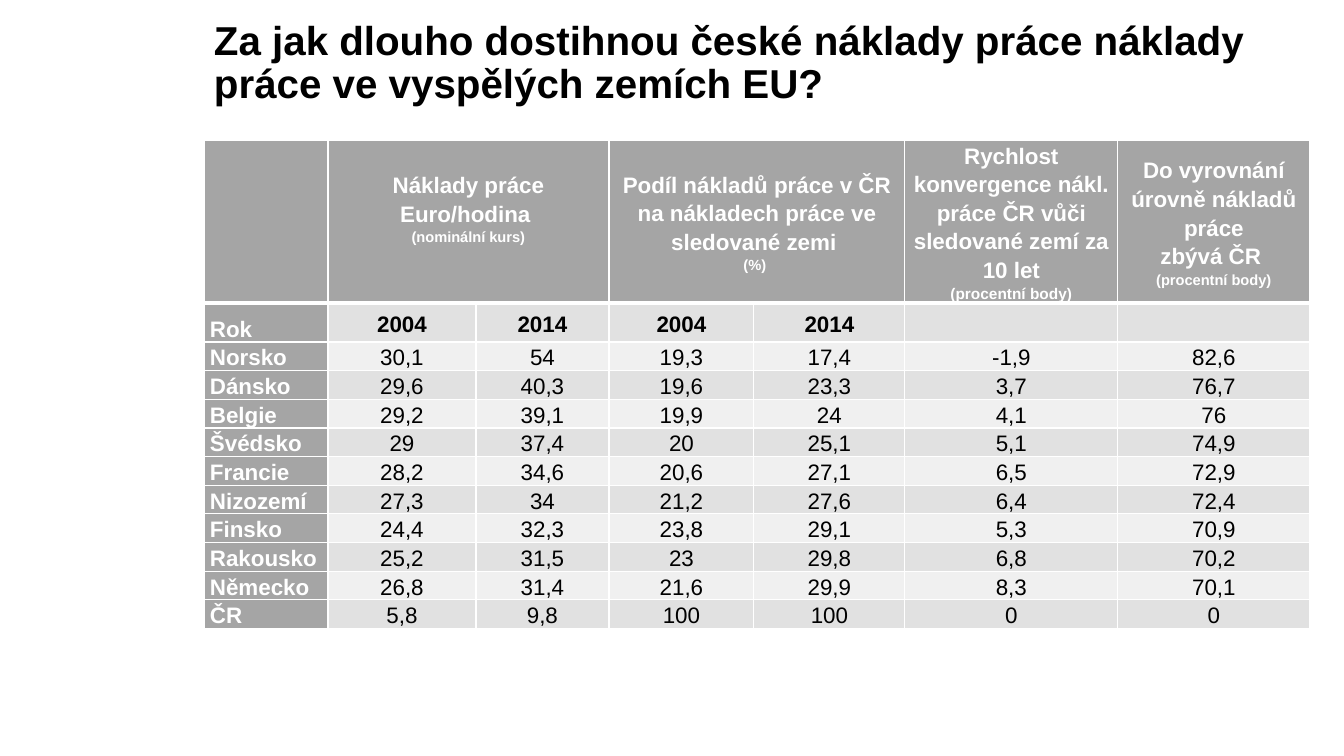
import pptx
import pptx.dml.color
import pptx.enum.text
import pptx.oxml
import pptx.oxml.ns
import pptx.util

EMU_PER_PX = 914400 / 100.8
ALIGN = pptx.enum.text.PP_ALIGN
ANCHOR = pptx.enum.text.MSO_ANCHOR

THEME = {
    "font": "Arial",
    "title_size": 28.8,
    "text_size": 16,
    "note_size": 10.5,
    "large_note_size": 11,
    "dark": "000000",
    "light": "FFFFFF",
    "header_fill": "A5A5A5",
    "band_fills": ["E1E1E1", "F0F0F0"],
    "border": "FFFFFF",
}

TITLE = "Za jak dlouho dostihnou české náklady práce náklady práce ve vyspělých zemích EU?"

TEXT, NOTE, LARGE_NOTE = "text_size", "note_size", "large_note_size"
HEADERS = {
    1: [
        [("Náklady práce", TEXT)],
        [("Euro/hodina ", TEXT)],
        [("(nominální kurs)", NOTE)],
    ],
    3: [
        [("Podíl nákladů práce v ČR na nákladech práce ve sledované zemi ", TEXT)],
        [("(%) ", NOTE)],
    ],
    5: [
        [("Rychlost konvergence nákl. práce ČR vůči", TEXT)],
        [("sledované zemí za 10 let", TEXT), ("(procentní body)", LARGE_NOTE)],
    ],
    6: [
        [("Do vyrovnání úrovně nákladů práce", TEXT)],
        [("zbývá ČR ", TEXT), ("(procentní body)", NOTE)],
    ],
}
SPANNED_COLUMNS = [1, 3]

ROWS = [
    ["Rok", "2004", "2014", "2004", "2014", "", ""],
    ["Norsko", "30,1", "54", "19,3", "17,4", "-1,9", "82,6"],
    ["Dánsko", "29,6", "40,3", "19,6", "23,3", "3,7", "76,7"],
    ["Belgie", "29,2", "39,1", "19,9", "24", "4,1", "76"],
    ["Švédsko", "29", "37,4", "20", "25,1", "5,1", "74,9"],
    ["Francie", "28,2", "34,6", "20,6", "27,1", "6,5", "72,9"],
    ["Nizozemí", "27,3", "34", "21,2", "27,6", "6,4", "72,4"],
    ["Finsko", "24,4", "32,3", "23,8", "29,1", "5,3", "70,9"],
    ["Rakousko", "25,2", "31,5", "23", "29,8", "6,8", "70,2"],
    ["Německo", "26,8", "31,4", "21,6", "29,9", "8,3", "70,1"],
    ["ČR", "5,8", "9,8", "100", "100", "0", "0"],
]
COLUMN_WIDTHS = [124, 148, 133, 145, 151, 213, 192]
ROW_HEIGHTS = [163, 39] + [28] * (len(ROWS) - 1)


def px(length):
    return pptx.util.Emu(round(length * EMU_PER_PX))


def apply_format(target, values):
    for name, value in values.items():
        setattr(target, name, value)


def format_font(font, size, color, bold):
    apply_format(font, {"name": THEME["font"], "size": pptx.util.Pt(size), "bold": bold})
    font.color.rgb = pptx.dml.color.RGBColor.from_string(color)


def set_borders(cell, top, bottom):
    properties = cell._tc.get_or_add_tcPr()
    widths = {"lnL": 1, "lnR": 1, "lnT": top, "lnB": bottom}
    for index, (tag, width) in enumerate(widths.items()):
        line = pptx.oxml.parse_xml(
            f'<a:{tag} {pptx.oxml.ns.nsdecls("a")} w="{pptx.util.Pt(width)}">'
            f'<a:solidFill><a:srgbClr val="{THEME["border"]}"/></a:solidFill></a:{tag}>'
        )
        properties.insert(index, line)


def style_cell(cell, fill, anchor=ANCHOR.MIDDLE, top=1, bottom=1):
    apply_format(cell, {
        "margin_left": px(6),
        "margin_right": px(6),
        "margin_top": 0,
        "margin_bottom": 0,
        "vertical_anchor": anchor,
    })
    cell.fill.solid()
    cell.fill.fore_color.rgb = pptx.dml.color.RGBColor.from_string(fill)
    set_borders(cell, top, bottom)


def write_cell(cell, paragraphs, color, bold, alignment):
    frame = cell.text_frame
    for index, parts in enumerate(paragraphs):
        paragraph = frame.add_paragraph() if index else frame.paragraphs[0]
        apply_format(paragraph, {"alignment": alignment, "line_spacing": 1.15})
        for part_index, (text, size) in enumerate(parts):
            if part_index:
                paragraph.add_line_break()
            run = paragraph.add_run()
            run.text = text
            format_font(run.font, THEME[size], color, bold)


def add_title(slide, left, top, width, height):
    title = slide.shapes.title
    apply_format(title, {
        "left": px(left), "top": px(top), "width": px(width), "height": px(height),
    })
    frame = title.text_frame
    frame.text = TITLE
    apply_format(frame, {
        "word_wrap": True,
        "auto_size": pptx.enum.text.MSO_AUTO_SIZE.NONE,
        "vertical_anchor": ANCHOR.MIDDLE,
        "margin_left": px(10),
        "margin_right": px(10),
        "margin_top": px(5),
        "margin_bottom": px(48),
    })
    paragraph = frame.paragraphs[0]
    apply_format(paragraph, {"alignment": ALIGN.LEFT, "line_spacing": 0.9})
    format_font(paragraph.runs[0].font, THEME["title_size"], THEME["dark"], True)


def fill_header_row(table):
    for column in range(len(COLUMN_WIDTHS)):
        style_cell(table.cell(0, column), THEME["header_fill"], bottom=3)
    for column in SPANNED_COLUMNS:
        table.cell(0, column).merge(table.cell(0, column + 1))
    for column, paragraphs in HEADERS.items():
        write_cell(table.cell(0, column), paragraphs, THEME["light"], True, ALIGN.CENTER)
    table.cell(0, 1).margin_bottom = px(28)


def fill_data_rows(table):
    for row, values in enumerate(ROWS, start=1):
        top = 3 if row == 1 else 1
        band = THEME["band_fills"][(row - 1) % 2]
        for column, text in enumerate(values):
            cell = table.cell(row, column)
            is_label = column == 0
            style_cell(
                cell,
                THEME["header_fill"] if is_label else band,
                ANCHOR.BOTTOM if is_label else ANCHOR.MIDDLE,
                top,
            )
            if text:
                write_cell(
                    cell,
                    [[(text, TEXT)]],
                    THEME["light"] if is_label else THEME["dark"],
                    is_label or row == 1,
                    ALIGN.LEFT if is_label else ALIGN.CENTER,
                )


def add_cost_table(slide, left, top):
    table = slide.shapes.add_table(
        len(ROW_HEIGHTS), len(COLUMN_WIDTHS), px(left), px(top),
        px(sum(COLUMN_WIDTHS)), px(sum(ROW_HEIGHTS)),
    ).table
    for column, width in zip(table.columns, COLUMN_WIDTHS):
        column.width = px(width)
    for row, height in zip(table.rows, ROW_HEIGHTS):
        row.height = px(height)
    fill_header_row(table)
    fill_data_rows(table)


def main():
    presentation = pptx.Presentation()
    presentation.slide_width = px(1344)
    presentation.slide_height = px(756)
    slide = presentation.slides.add_slide(presentation.slide_layouts[5])
    add_title(slide, 204, 40, 1118, 91)
    add_cost_table(slide, 204, 140)
    presentation.save("out.pptx")


if __name__ == "__main__":
    main()
